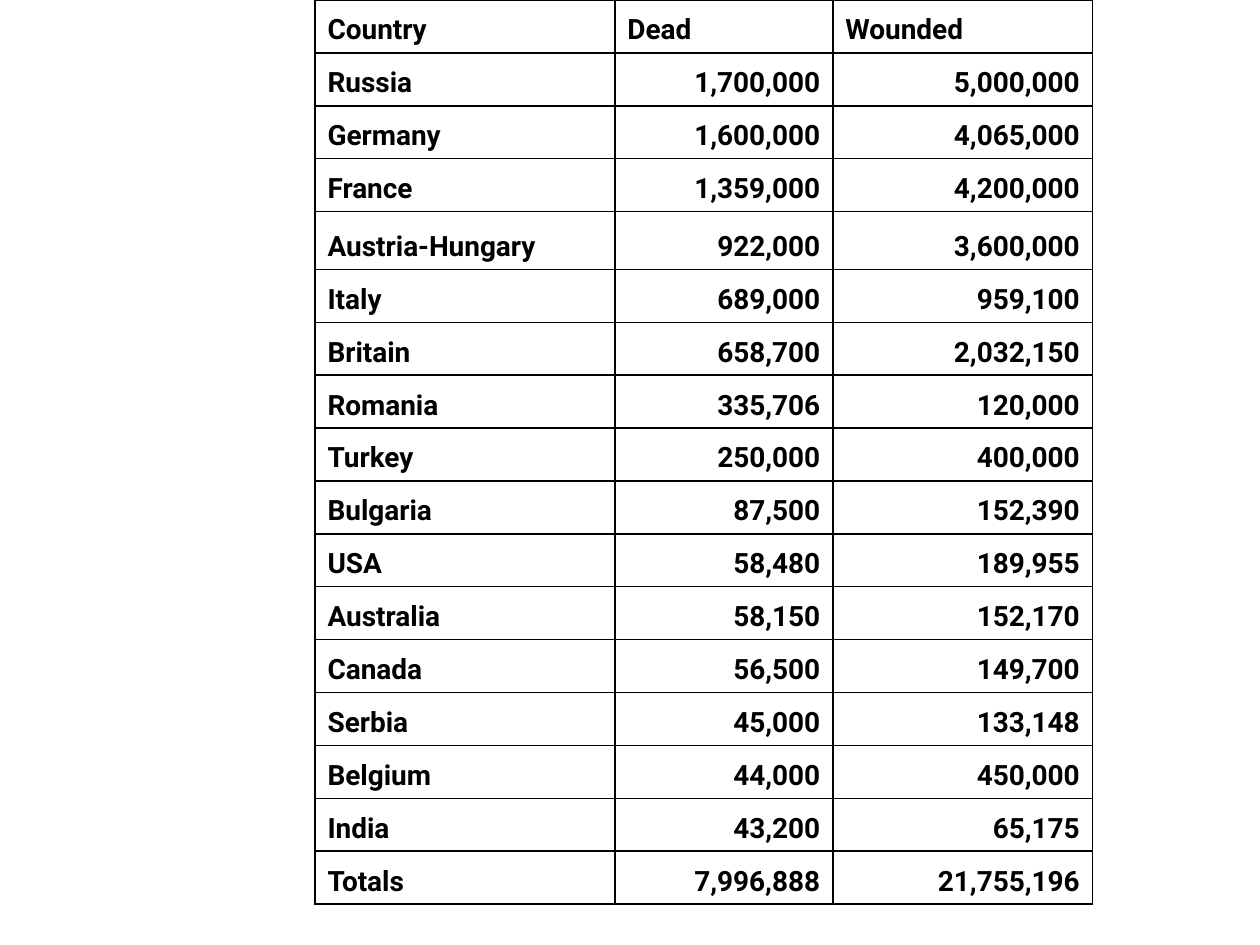
from pptx import Presentation
from pptx import util as u
from pptx.dml import color
from pptx.enum import text
from pptx.oxml import parse_xml
from pptx.oxml import ns

HUES = {"ink": "000000"}
WIDTHS = [2.38, 1.73, 2.06]
ROW, TALL = 0.42, 0.46
LOSSES = [
    ("Country", "Dead", "Wounded"),
    ("Russia", "1,700,000", "5,000,000"),
    ("Germany", "1,600,000", "4,065,000"),
    ("France", "1,359,000", "4,200,000"),
    ("Austria-Hungary", "922,000", "3,600,000"),
    ("Italy", "689,000", "959,100"),
    ("Britain", "658,700", "2,032,150"),
    ("Romania", "335,706", "120,000"),
    ("Turkey", "250,000", "400,000"),
    ("Bulgaria", "87,500", "152,390"),
    ("USA", "58,480", "189,955"),
    ("Australia", "58,150", "152,170"),
    ("Canada", "56,500", "149,700"),
    ("Serbia", "45,000", "133,148"),
    ("Belgium", "44,000", "450,000"),
    ("India", "43,200", "65,175"),
    ("Totals", "7,996,888", "21,755,196"),
]


class Deck:
    def __init__(self, slide, face="Roboto", size=16, hue="ink"):
        self.slide, self.face, self.size = slide, face, size
        self.hue = HUES[hue]

    def border(self, cell, width=1):
        props = cell._tc.get_or_add_tcPr()
        for side in "LRTB":
            props.append(parse_xml(
                f'<a:ln{side} {ns.nsdecls("a")} w="{u.Pt(width)}"><a:solidFill>'
                f'<a:srgbClr val="{self.hue}"/></a:solidFill></a:ln{side}>'))

    def cell(self, cell, words, right):
        self.border(cell)
        cell.fill.background()
        cell.vertical_anchor = text.MSO_ANCHOR.BOTTOM
        cell.text = words
        para = cell.text_frame.paragraphs[0]
        para.alignment = text.PP_ALIGN.RIGHT if right else text.PP_ALIGN.LEFT
        font = para.font
        font.name, font.size, font.bold = self.face, u.Pt(self.size), True
        font.color.rgb = color.RGBColor.from_string(self.hue)

    def table(self, left, top, rows, widths, heights):
        frame = self.slide.shapes.add_table(
            len(rows), len(widths), u.Inches(left), u.Inches(top),
            u.Inches(sum(widths)), u.Inches(sum(heights)))
        grid = frame.table
        grid.first_row = grid.horz_banding = False
        for col, width in zip(grid.columns, widths):
            col.width = u.Inches(width)
        for r, (row, height) in enumerate(zip(rows, heights)):
            grid.rows[r].height = u.Inches(height)
            for c, words in enumerate(row):
                self.cell(grid.cell(r, c), words, r > 0 and c > 0)


def main():
    show = Presentation()
    show.slide_width, show.slide_height = u.Inches(10), u.Inches(7.5)
    deck = Deck(show.slides.add_slide(show.slide_layouts[6]))
    heights = [TALL if row[0] == "Austria-Hungary" else ROW for row in LOSSES]
    deck.table(2.5, 0, LOSSES, WIDTHS, heights)
    show.save("out.pptx")


if __name__ == "__main__":
    main()
